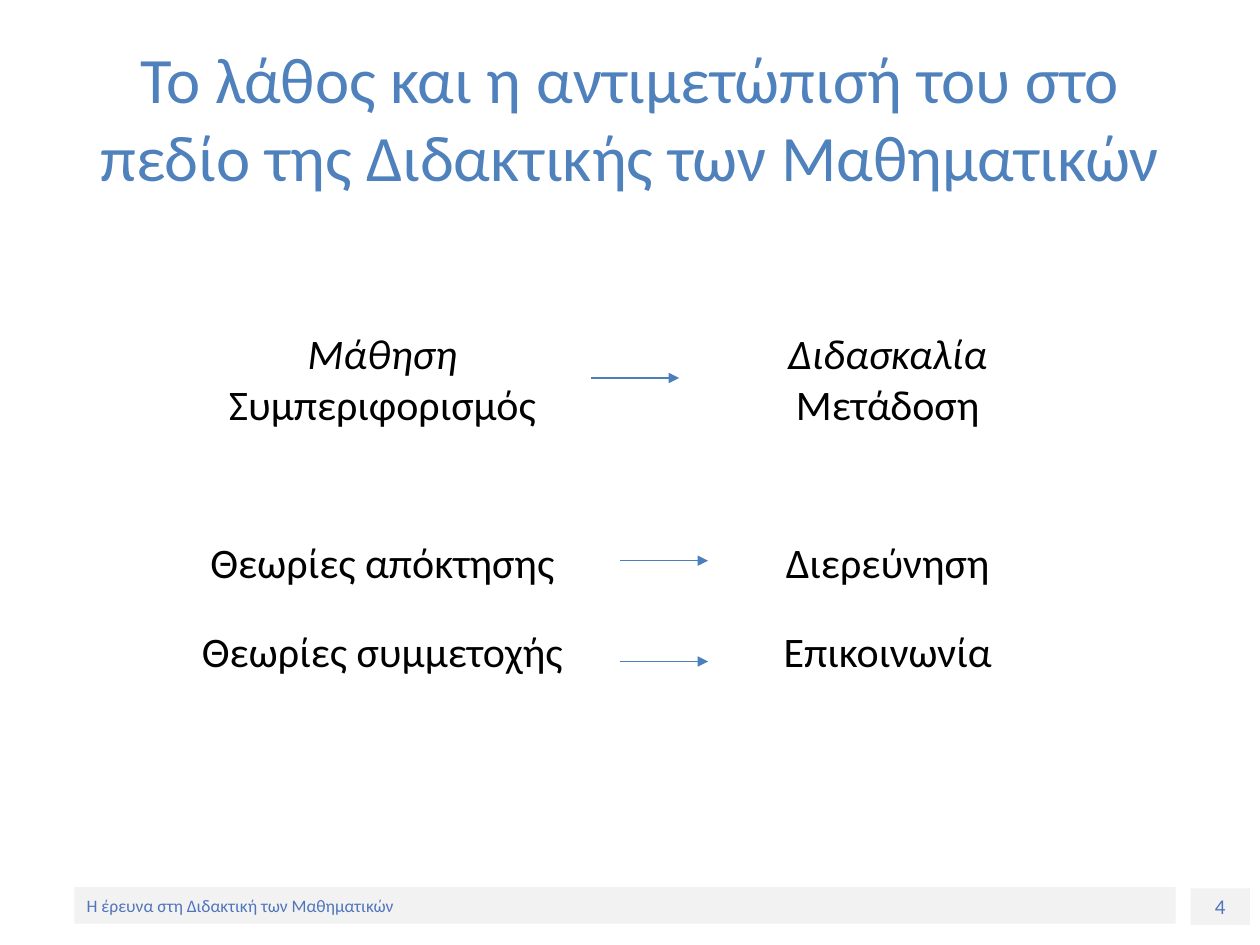
from dataclasses import dataclass
from typing import Any

from lxml.etree import SubElement as Sub
from pptx import Presentation
from pptx.dml.color import RGBColor as Color
from pptx.enum.shapes import MSO_CONNECTOR as Link, MSO_SHAPE as Form
from pptx.enum.text import MSO_ANCHOR as Anchor, MSO_AUTO_SIZE as Fit, PP_ALIGN as Align
from pptx.oxml.ns import qn
from pptx.util import Inches, Pt


@dataclass(frozen=True)
class Theme:
    font: str = "Calibri"
    title: Color = Color(0x4F, 0x81, 0xBD)
    text: Color = Color(0, 0, 0)
    foot: Color = Color(0x50, 0x75, 0xBC)
    band: Color = Color(0xF2, 0xF2, 0xF2)
    line: Color = Color(0x4B, 0x7E, 0xBC)
    head: float = 37
    body: float = 24
    note: float = 10
    page: float = 12


@dataclass(frozen=True)
class Box:
    left: float
    top: float
    width: float
    height: float

    def lengths(self) -> list[Inches]:
        return [Inches(n) for n in (self.left, self.top, self.width, self.height)]


@dataclass(frozen=True)
class Row:
    top: float
    height: float
    cells: tuple[list[str], list[str]]
    start: float  # left end of the arrow
    level: float  # height of the arrow on the slide


THEME = Theme()
COLUMNS = (1.38, 5.39)
WIDTH = 3.31
REACH = 0.7
ROWS = [
    Row(2.49, 1.02, (["Μάθηση", "Συμπεριφορισμός"], ["Διδασκαλία", "Μετάδοση"]), 4.69, 3),
    Row(4.1, 0.71, (["Θεωρίες απόκτησης"], ["Διερεύνηση"]), 4.92, 4.45),
    Row(4.81, 0.71, (["Θεωρίες συμμετοχής"], ["Επικοινωνία"]), 4.92, 5.25),
]


def write(shape: Any, lines: list[str], size: float, color: Color,
          align: Align = Align.CENTER) -> None:
    """Fill a shape with text; the first of several lines is an italic heading."""
    frame = shape.text_frame
    frame.text = "\n".join(lines)
    frame.word_wrap = True
    frame.auto_size = Fit.NONE
    frame.vertical_anchor = Anchor.MIDDLE
    for index, para in enumerate(frame.paragraphs):
        para.alignment = align
        font = para.font
        font.name, font.size, font.color.rgb = THEME.font, Pt(size), color
        font.italic = index == 0 and len(lines) > 1


def band(slide: Any, box: Box, text: str, size: float, align: Align) -> None:
    shape = slide.shapes.add_shape(Form.RECTANGLE, *box.lengths())
    shape.shadow.inherit = False
    shape.fill.solid()
    shape.fill.fore_color.rgb = THEME.band
    shape.line.fill.background()
    write(shape, [text], size, THEME.foot, align)


def arrow(slide: Any, left: float, level: float) -> None:
    ends = [Inches(n) for n in (left, level, left + REACH, level)]
    link = slide.shapes.add_connector(Link.STRAIGHT, *ends)
    link.line.color.rgb = THEME.line
    link.line.width = Pt(0.75)
    Sub(link.line._get_or_add_ln(), qn("a:tailEnd"), type="triangle")
    Sub(link._element.spPr, qn("a:effectLst"))


def main() -> None:
    deck = Presentation()
    deck.slide_width, deck.slide_height = Inches(10), Inches(7.5)
    slide = deck.slides.add_slide(deck.slide_layouts[5])

    # Footer
    band(slide, Box(9.45, 7.05, 0.47, 0.29), "4", THEME.page, Align.CENTER)
    band(slide, Box(0.59, 7.04, 8.74, 0.29), "Η έρευνα στη Διδακτική των Μαθηματικών",
         THEME.note, Align.LEFT)

    # Title
    title = slide.shapes.title
    title.left, title.top, title.width, title.height = Box(0.5, 0.3, 9, 1.25).lengths()
    write(title, ["Το λάθος και η αντιμετώπισή του στο πεδίο της Διδακτικής των Μαθηματικών"],
          THEME.head, THEME.title)

    # Learning theories and the teaching that follows from each
    for row in ROWS:
        for left, lines in zip(COLUMNS, row.cells):
            box = Box(left, row.top, WIDTH, row.height)
            write(slide.shapes.add_textbox(*box.lengths()), lines, THEME.body, THEME.text)
        arrow(slide, row.start, row.level)

    deck.save("out.pptx")


if __name__ == "__main__":
    main()
